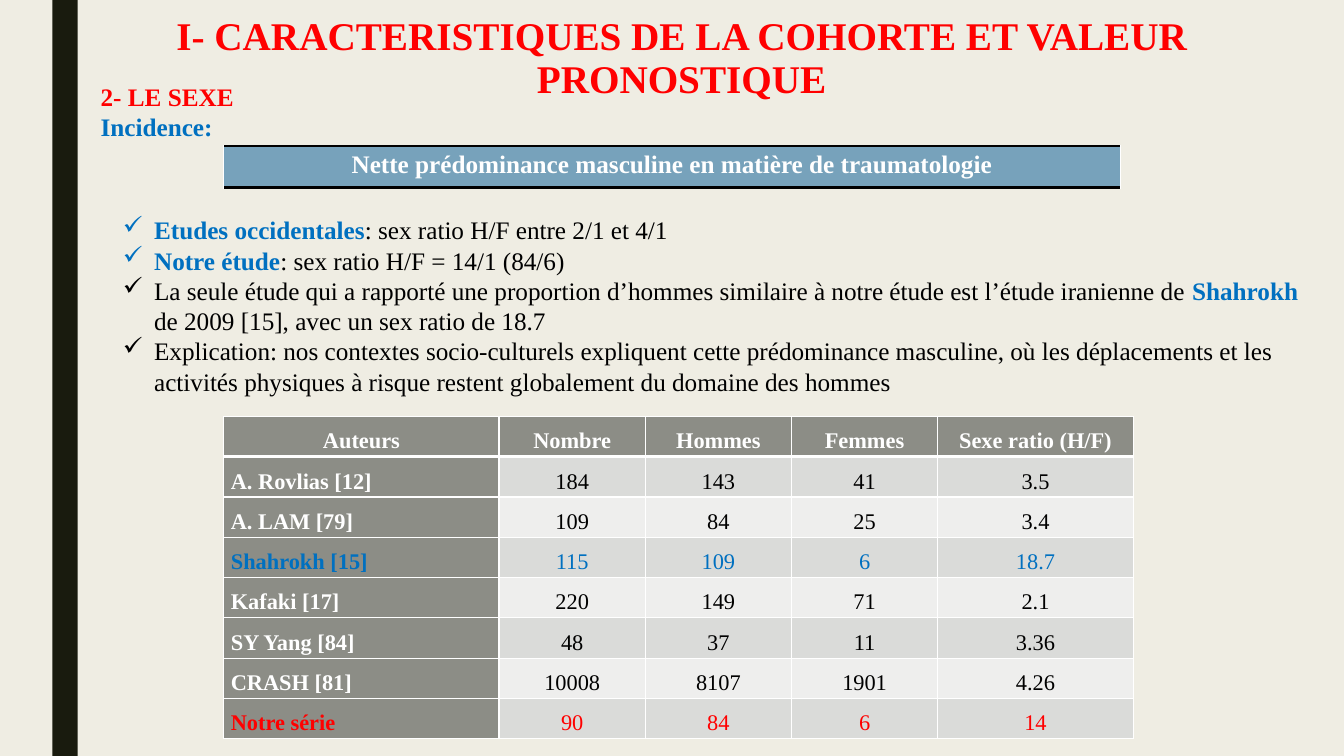
from pptx import Presentation
from pptx.dml.color import RGBColor
from pptx.enum.shapes import MSO_SHAPE
from pptx.enum.text import MSO_ANCHOR, PP_ALIGN
from pptx.oxml import parse_xml
from pptx.oxml.ns import nsdecls
from pptx.util import Pt

PX = 9144  # 100 px to the inch
FONT = "Times New Roman"
RECT = MSO_SHAPE.RECTANGLE
CENTER, LEFT, JUST = PP_ALIGN.CENTER, PP_ALIGN.LEFT, PP_ALIGN.JUSTIFY
MIDDLE = MSO_ANCHOR.MIDDLE

CREAM = RGBColor(0xEF, 0xED, 0xE3)
DARK = RGBColor(0x19, 0x1B, 0x0E)
RED = RGBColor(0xFF, 0x00, 0x00)
BLUE = RGBColor(0x00, 0x70, 0xC0)
BLACK = RGBColor(0x00, 0x00, 0x00)
WHITE = RGBColor(0xFF, 0xFF, 0xFF)
STEEL = RGBColor(0x77, 0xA2, 0xBB)
GRAY = RGBColor(0x8C, 0x8D, 0x86)
BANDS = [RGBColor(0xEE, 0xEE, 0xED), RGBColor(0xDA, 0xDB, 0xD9)]


def style(para, size, color, bold, align=LEFT):
    para.alignment = align
    for run in para.runs:
        run.font.name, run.font.size = FONT, Pt(size)
        run.font.color.rgb, run.font.bold = color, bold


def paint(cell, fill, edges):
    # Borders must come before the fill in the cell properties
    props = cell._tc.get_or_add_tcPr()
    for side, (color, width) in edges.items():
        props.append(parse_xml(
            f'<a:ln{side} {nsdecls("a")} w="{Pt(width)}"><a:solidFill>'
            f'<a:srgbClr val="{color}"/></a:solidFill></a:ln{side}>'))
    cell.fill.solid()
    cell.fill.fore_color.rgb = fill


prs = Presentation()
prs.slide_width, prs.slide_height = 1333 * PX, 750 * PX
slide = prs.slides.add_slide(prs.slide_layouts[6])
slide.background.fill.solid()
slide.background.fill.fore_color.rgb = CREAM
shapes = slide.shapes

# Side bar
bar = shapes.add_shape(RECT, 52 * PX, 0, 25 * PX, 750 * PX)
bar.shadow.inherit = False
bar.fill.solid()
bar.fill.fore_color.rgb = DARK
bar.line.fill.background()

# Title
frame = shapes.add_textbox(151 * PX, 9 * PX, 1050 * PX, 100 * PX).text_frame
frame.word_wrap = True
frame.vertical_anchor = MIDDLE
title = frame.paragraphs[0]
title.text = "I- CARACTERISTIQUES DE LA COHORTE ET VALEUR PRONOSTIQUE"
title.line_spacing = 0.9
style(title, 28, RED, True, CENTER)

# Section heading
frame = shapes.add_textbox(90 * PX, 76 * PX, 225 * PX, 70 * PX).text_frame
frame.word_wrap = True
frame.text = "2- LE SEXE\nIncidence:"
for para, color in zip(frame.paragraphs, [RED, BLUE]):
    style(para, 18, color, True)

# Results by author
rows = [
    ["Auteurs", "Nombre", "Hommes", "Femmes", "Sexe ratio (H/F)"],
    ["A. Rovlias [12]", "184", "143", "41", "3.5"],
    ["A. LAM [79]", "109", "84", "25", "3.4"],
    ["Shahrokh [15]", "115", "109", "6", "18.7"],
    ["Kafaki [17]", "220", "149", "71", "2.1"],
    ["SY Yang [84]", "48", "37", "11", "3.36"],
    ["CRASH [81]", "10008", "8107", "1901", "4.26"],
    ["Notre série", "90", "84", "6", "14"],
]
marks = {3: BLUE, 7: RED}
widths = [273, 145, 145, 145, 194]
grid = shapes.add_table(len(rows), len(widths), 222 * PX, 413 * PX,
                        sum(widths) * PX, 40 * len(rows) * PX).table
grid.horz_banding = False
for col, width in zip(grid.columns, widths):
    col.width = width * PX
for r, row in enumerate(rows):
    for c, text in enumerate(row):
        cell = grid.cell(r, c)
        head = r == 0 or c == 0
        cell.margin_left = cell.margin_right = 7 * PX
        cell.margin_top = cell.margin_bottom = 0
        para = cell.text_frame.paragraphs[0]
        para.text = text
        para.line_spacing = 1.5
        style(para, 16, marks.get(r, WHITE if head else BLACK), head,
              JUST if r and c == 0 else CENTER)
        edges = {side: (WHITE, 1) for side in "LRTB"}
        if r == 0:
            edges["B"] = (WHITE, 3)
        elif r == 1:
            edges["T"] = (WHITE, 3)
        paint(cell, GRAY if head else BANDS[r % 2], edges)

# Findings
points = [
    [("Etudes occidentales", True), (": sex ratio H/F entre 2/1 et 4/1", False)],
    [("Notre étude", True), (": sex ratio H/F = 14/1 (84/6)", False)],
    [("La seule étude qui a rapporté une proportion d’hommes similaire à "
      "notre étude est l’étude iranienne de ", False),
     ("Shahrokh", True),
     (" de 2009 [15], avec un sex ratio de 18.7", False)],
    [("Explication: nos contextes socio-culturels expliquent cette "
      "prédominance masculine, où les déplacements et les activités "
      "physiques à risque restent globalement du domaine des hommes", False)],
]
frame = shapes.add_textbox(112 * PX, 208 * PX, 1191 * PX, 192 * PX).text_frame
frame.word_wrap = True
for i, parts in enumerate(points):
    para = frame.add_paragraph() if i else frame.paragraphs[0]
    for text, strong in parts:
        para.add_run().text = text
    style(para, 18, BLACK, False)
    for run, (text, strong) in zip(para.runs, parts):
        if strong:
            run.font.color.rgb, run.font.bold = BLUE, True
    props = para._p.get_or_add_pPr()
    props.set("marL", str(31 * PX))
    props.set("indent", str(-31 * PX))
    props.append(parse_xml(f'<a:buChar {nsdecls("a")} char="✓"/>'))

# Key message band
band = shapes.add_table(1, 1, 222 * PX, 145 * PX, 889 * PX, 41 * PX).table
cell = band.cell(0, 0)
para = cell.text_frame.paragraphs[0]
para.text = "Nette prédominance masculine en matière de traumatologie"
style(para, 18, WHITE, True, CENTER)
paint(cell, STEEL, {"T": (BLACK, 2), "B": (BLACK, 2)})

prs.save("out.pptx")
